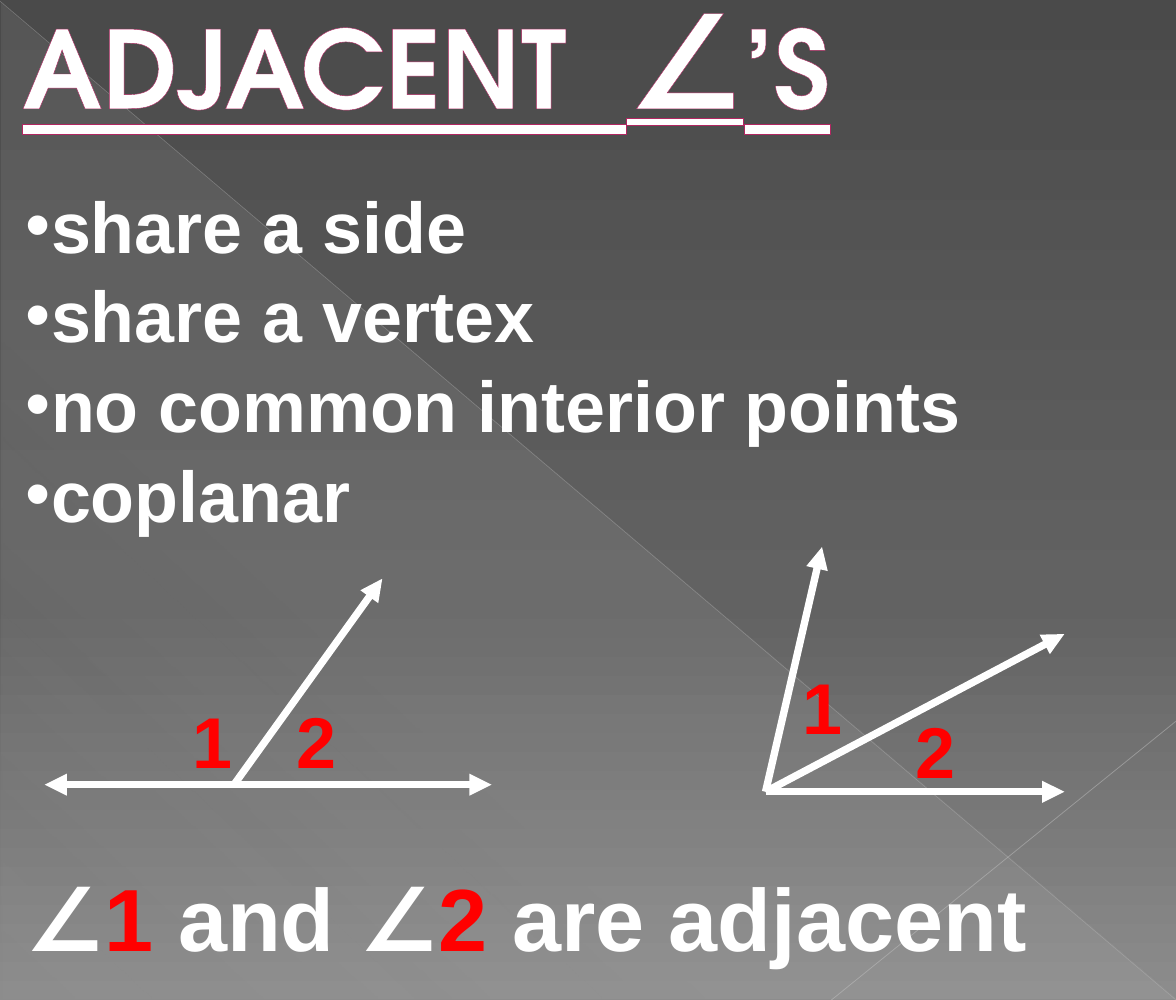
from lxml import etree
from pptx import Presentation
from pptx.dml.color import RGBColor
from pptx.enum.shapes import MSO_CONNECTOR, MSO_SHAPE
from pptx.enum.text import MSO_ANCHOR, MSO_AUTO_SIZE, PP_ALIGN
from pptx.oxml.ns import qn
from pptx.util import Inches, Pt

STRAIGHT = MSO_CONNECTOR.STRAIGHT
TRIANGLE = MSO_SHAPE.RIGHT_TRIANGLE
LEFT, CENTER = PP_ALIGN.LEFT, PP_ALIGN.CENTER
W, H = 10, 8.5
COLORS = {"text": "FFFFFF", "number": "FF0000", "outline": "B12761",
          "sheen": "D2D2D2", "diagonal": "BFBFBF", "corner": "C6C6C6",
          "dark": "4A4A4A", "mid": "626262", "light": "8C8C8C"}
BODY, SYMBOL, HEADING = "Arial", "Montserrat", "TeX Gyre Adventor"


def sub(parent, tag, **attrs):
    return etree.SubElement(parent, qn(tag), attrs)


def set_alpha(color, percent):
    sub(color, "a:alpha", val=str(percent * 1000))


def set_gradient(fill, element, stops, angle):
    """Stops are (position, colour, opacity), all in percent; angle is clockwise."""
    fill.gradient()
    grad = next(element.iter(qn("a:gradFill")))
    for child in list(grad):
        grad.remove(child)
    gs_list = sub(grad, "a:gsLst")
    for position, color, opacity in stops:
        gs = sub(gs_list, "a:gs", pos=str(position * 1000))
        set_alpha(sub(gs, "a:srgbClr", val=COLORS[color]), opacity)
    sub(grad, "a:lin", ang=str(angle * 60000), scaled="0")


def add_line(s, start, end, color="text", width=4.5, head=False, tail=False, opacity=100):
    line = s.shapes.add_connector(STRAIGHT, *map(Inches, start + end))
    line.line.color.rgb = RGBColor.from_string(COLORS[color])
    line.line.width = Pt(width)
    sp_pr = line._element.spPr
    ln = sp_pr.find(qn("a:ln"))
    if opacity < 100:
        set_alpha(next(ln.iter(qn("a:srgbClr"))), opacity)
    for wanted, tag in ((head, "a:headEnd"), (tail, "a:tailEnd")):
        if wanted:
            sub(ln, tag, type="triangle")
    sub(sp_pr, "a:effectLst")
    return line


def add_run(p, text, size, font=BODY, color="text"):
    r = p.add_run()
    r.text = text
    r.font.size = Pt(size)
    r.font.bold = True
    r.font.color.rgb = RGBColor.from_string(COLORS[color])
    r.font.name = font
    r.font._element.find(qn("a:latin")).addnext(
        r.font._element.makeelement(qn("a:ea"), {"typeface": font}))
    return r


def place(sp, box):
    sp.left, sp.top, sp.width, sp.height = map(Inches, box)


def add_text_box(s, box, wrap):
    sp = s.shapes.add_textbox(*map(Inches, box))
    sp.text_frame.word_wrap = wrap
    return sp.text_frame


def add_backdrop(s):
    set_gradient(s.background.fill, s._element,
                 [(0, "dark", 100), (60, "mid", 100), (100, "light", 100)], 90)
    sheen = s.shapes.add_shape(TRIANGLE, *map(Inches, (0.01, 0.02, 9.99, 8.47)))
    sheen.shadow.inherit = False
    sheen.line.fill.background()
    set_gradient(sheen.fill, sheen._element,
                 [(0, "sheen", 10), (70, "sheen", 8), (100, "sheen", 1)], 133)
    parts = [sheen,
             add_line(s, (0, 0.01), (W, H), "diagonal", 0.39, opacity=35),
             add_line(s, (W, 6.13), (7.07, H), "corner", 0.47, opacity=45)]
    for i, part in enumerate(parts):
        s.shapes._spTree.insert(2 + i, part._element)


def add_title(s, box):
    sp = s.shapes.title
    place(sp, box)
    tf = sp.text_frame
    tf.auto_size = MSO_AUTO_SIZE.NONE
    tf.vertical_anchor = MSO_ANCHOR.MIDDLE
    p = tf.paragraphs[0]
    p.alignment = LEFT
    p._p.get_or_add_pPr().set("marL", str(Inches(0.53)))
    for text, size, font in (("ADJACENT  ", 66, HEADING), ("∠", 80, SYMBOL), ("’S", 66, HEADING)):
        r = add_run(p, text, size, font)
        r.font.underline = True
        ln = r.font._element.makeelement(qn("a:ln"), {"w": str(Pt(0.5))})
        sub(sub(ln, "a:solidFill"), "a:srgbClr", val=COLORS["outline"])
        r.font._element.insert(0, ln)


def add_properties(s, box):
    sp = s.placeholders[1]
    place(sp, box)
    tf = sp.text_frame
    tf.auto_size = MSO_AUTO_SIZE.NONE
    tf.word_wrap = False
    tf.margin_top = Inches(0.09)
    items = ["share a side", "share a vertex", "no common interior points", "coplanar"]
    for i, item in enumerate(items):
        p = tf.add_paragraph() if i else tf.paragraphs[0]
        p.space_before = Pt(2.2 if i else 0)
        p_pr = p._p.get_or_add_pPr()
        p_pr.set("marL", "0")
        p_pr.set("indent", "0")
        sub(p_pr, "a:buFont", typeface=BODY)
        sub(p_pr, "a:buChar", char="•")
        add_run(p, item, 44)


def add_angles(s, vertex, ray_ends, labels):
    """Draw rays from the vertex and number the angles; offsets are from the vertex."""
    x, y = vertex
    for dx, dy in ray_ends:
        add_line(s, vertex, (x + dx, y + dy), tail=True)
    for number, (dx, dy) in enumerate(labels, 1):
        p = add_text_box(s, (x + dx, y + dy, 0.55, 0.84), False).paragraphs[0]
        p.alignment = CENTER
        add_run(p, str(number), 44, color="number")


def add_conclusion(s, box):
    p = add_text_box(s, box, True).paragraphs[0]
    for number, words in (("1", " and "), ("2 ", "are adjacent")):
        add_run(p, "∠", 54, SYMBOL)
        add_run(p, number, 54, color="number")
        add_run(p, words, 54)


def main():
    prs = Presentation()
    prs.slide_width, prs.slide_height = Inches(W), Inches(H)
    s = prs.slides.add_slide(prs.slide_layouts[1])
    add_backdrop(s)
    add_title(s, (-0.44, -0.23, 8.42, 1.42))
    add_properties(s, (0.12, 1.45, 8.24, 3.06))
    add_line(s, (0.38, 6.67), (4.18, 6.67), head=True, tail=True)
    add_angles(s, (1.99, 6.67), [(1.26, -1.75)], [(-0.46, -0.8), (0.43, -0.8)])
    add_angles(s, (6.51, 6.73), [(0.48, -2.08), (2.54, 0), (2.54, -1.34)],
               [(0.21, -1.15), (1.17, -0.77)])
    add_conclusion(s, (0.12, 7.29, 10.39, 1.01))
    prs.save("out.pptx")


if __name__ == "__main__":
    main()
